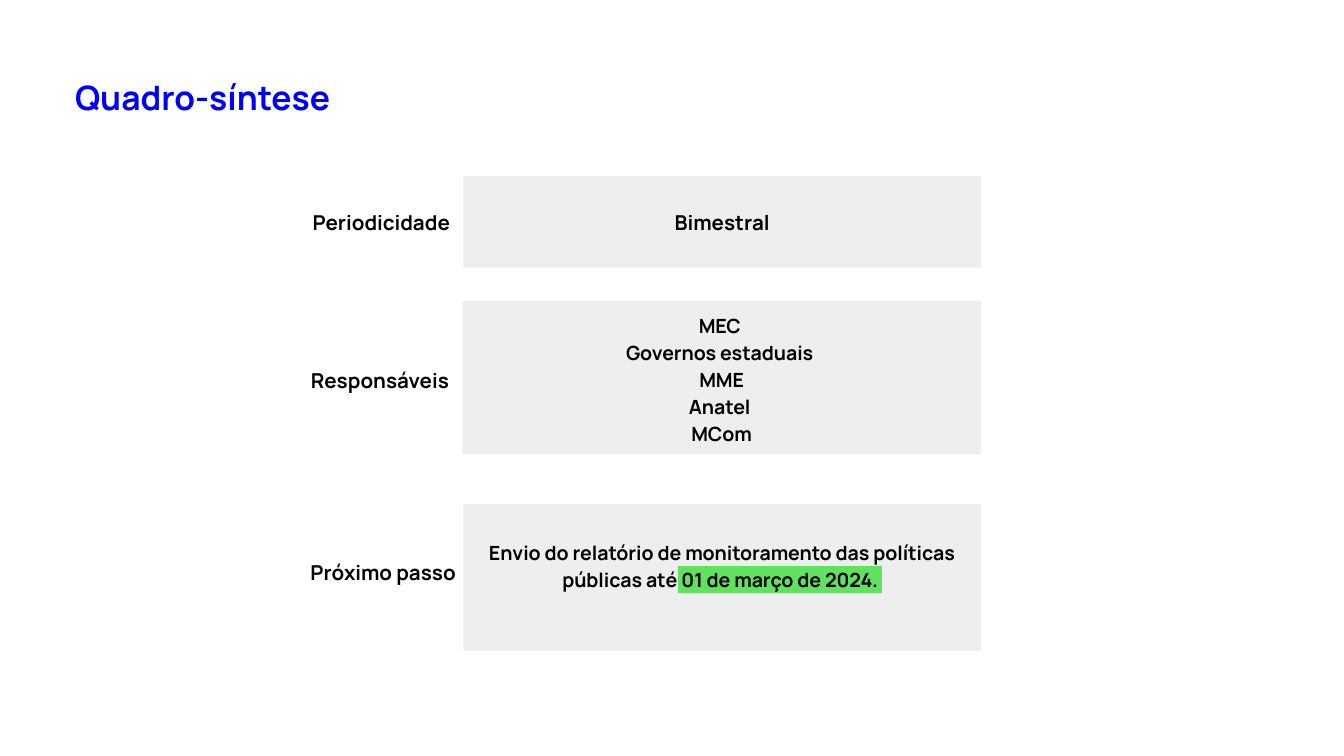
from pptx import Presentation
from pptx.dml.color import RGBColor
from pptx.enum.shapes import MSO_SHAPE as Shape
from pptx.enum.text import MSO_ANCHOR as Anchor, MSO_AUTO_SIZE as AutoSize, PP_ALIGN as Align
from pptx.oxml import parse_xml
from pptx.oxml.ns import nsdecls, qn
from pptx.util import Cm, Pt

FONT = "Manrope"
BLACK = "000000"
BLUE = "0000FF"
GREY = "EEEEEE"
GREEN = "60E160"


def color(hex_value):
    return RGBColor.from_string(hex_value)


def highlight(span, hex_value):
    mark = parse_xml(
        f'<a:highlight {nsdecls("a")}><a:srgbClr val="{hex_value}"/></a:highlight>'
    )
    span.font._element.find(qn("a:solidFill")).addnext(mark)


def write(frame, lines, size, align, spacing=None, hex_value=BLACK):
    for index, spans in enumerate(lines):
        para = frame.paragraphs[0] if index == 0 else frame.add_paragraph()
        para.alignment = align
        para.line_spacing = spacing
        for text, mark in spans:
            span = para.add_run()
            span.text = text
            span.font.name = FONT
            span.font.size = Pt(size)
            span.font.bold = True
            span.font.color.rgb = color(hex_value)
            if mark:
                highlight(span, mark)


def set_frame(frame, inset, anchor, bottom=None):
    frame.word_wrap = True
    frame.auto_size = AutoSize.NONE
    frame.vertical_anchor = anchor
    frame.margin_left = frame.margin_right = frame.margin_top = Cm(inset)
    frame.margin_bottom = Cm(inset if bottom is None else bottom)


def add_title(page, box, text):
    frame = page.shapes.add_textbox(*map(Cm, box)).text_frame
    set_frame(frame, 0.18, Anchor.TOP)
    write(frame, [[(text, None)]], 18, Align.LEFT, hex_value=BLUE)


def add_label(page, box, text, anchor=Anchor.TOP):
    frame = page.shapes.add_textbox(*map(Cm, box)).text_frame
    set_frame(frame, 0.25, anchor)
    write(frame, [[(text, None)]], 11, Align.RIGHT, 1.15)


def add_panel(page, box, lines, size=10.5, spacing=1.15, bottom=0.1):
    panel = page.shapes.add_shape(Shape.RECTANGLE, *map(Cm, box))
    panel.shadow.inherit = False
    panel.fill.solid()
    panel.fill.fore_color.rgb = color(GREY)
    panel.line.fill.background()
    set_frame(panel.text_frame, 0.1, Anchor.MIDDLE, bottom)
    write(panel.text_frame, lines, size, Align.CENTER, spacing)


def build_summary(deck):
    page = deck.slides.add_slide(deck.slide_layouts[6])
    add_title(page, (1.24, 1.27, 20.17, 1.14), "Quadro-síntese")

    add_panel(page, (8.76, 3.33, 9.78, 1.73), [[("Bimestral", None)]], 11, None)
    add_label(page, (5.38, 3.58, 3.38, 1.19), "Periodicidade", Anchor.MIDDLE)

    owners = ["MEC ", "Governos estaduais ", "MME", "Anatel ", "MCom"]
    add_panel(page, (8.74, 5.69, 9.8, 2.9), [[(owner, None)] for owner in owners])
    add_label(page, (5.18, 6.63, 3.56, 1.04), "Responsáveis")

    next_step = [
        ("Envio do relatório de monitoramento das políticas públicas até", None),
        (" 01 de março de 2024. ", GREEN),
    ]
    add_panel(page, (8.76, 9.53, 9.78, 2.77), [next_step], bottom=0.6)
    add_label(page, (5.11, 10.26, 3.76, 1.04), "Próximo passo")


def main():
    deck = Presentation()
    deck.slide_width = Cm(25.4)
    deck.slide_height = Cm(14.29)
    build_summary(deck)
    deck.save("out.pptx")


if __name__ == "__main__":
    main()
